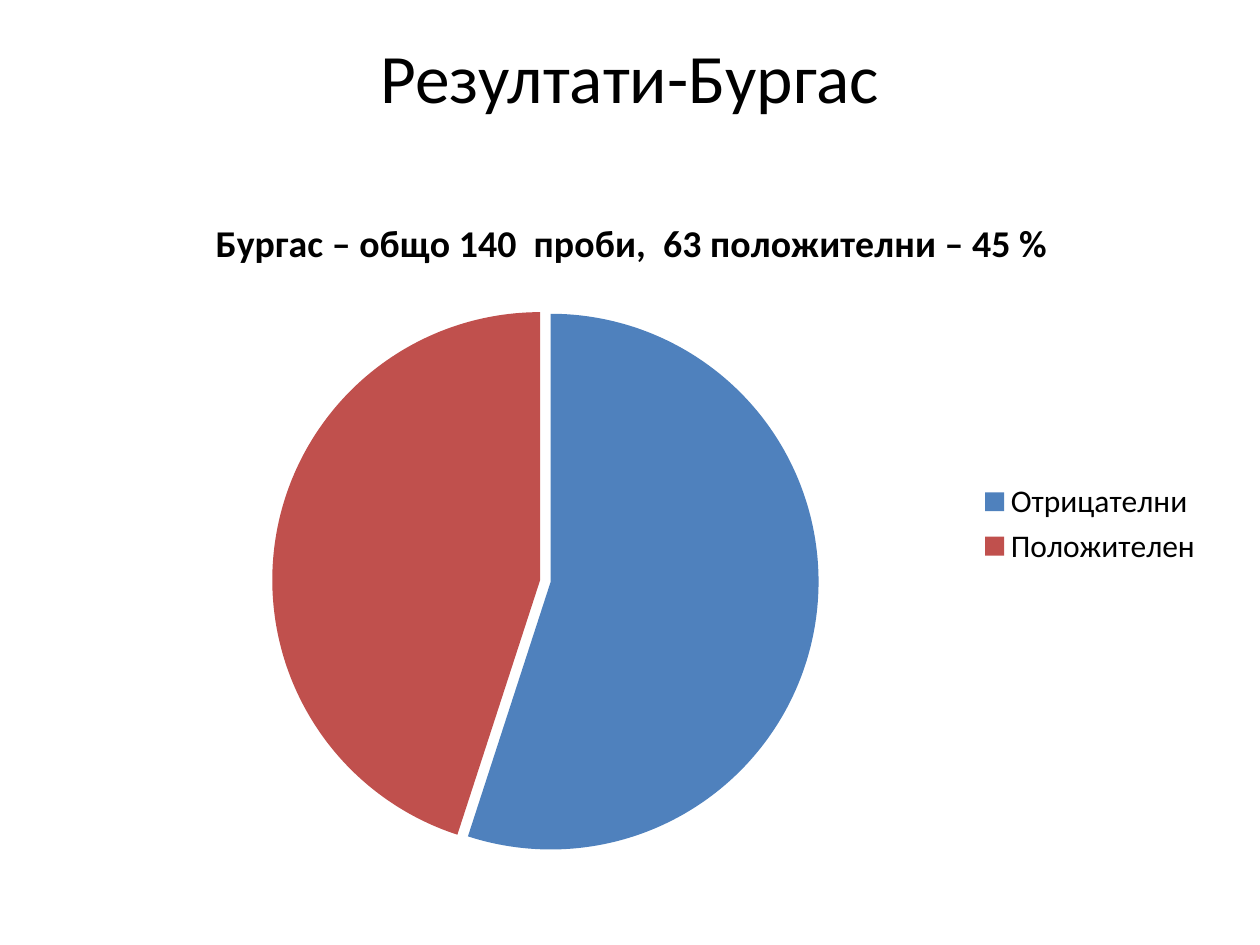
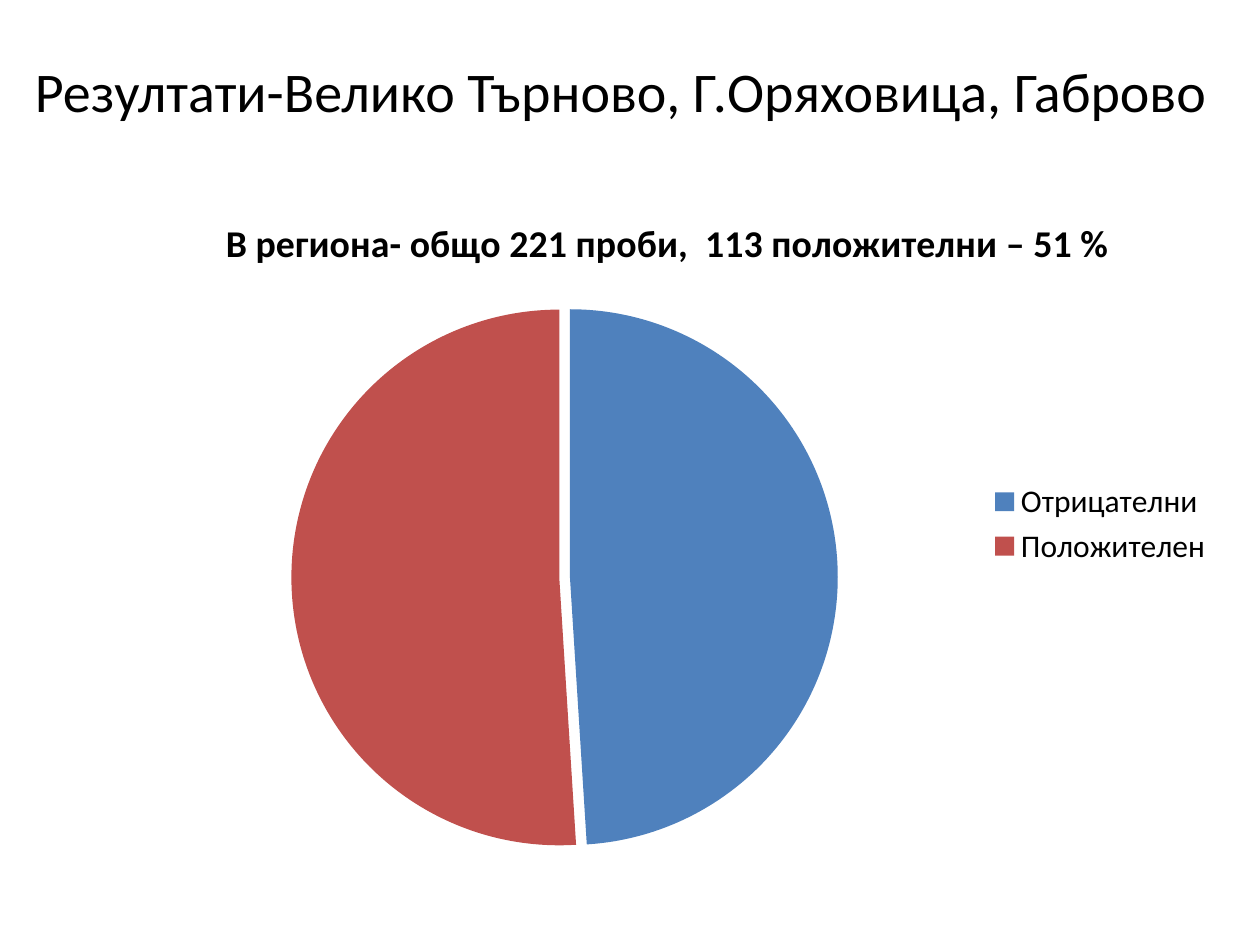
from lxml.etree import SubElement
from pptx import Presentation
from pptx.chart.data import CategoryChartData
from pptx.dml.color import RGBColor
from pptx.enum.chart import XL_CHART_TYPE as ChartType, XL_LEGEND_POSITION as LegendPos
from pptx.enum.text import MSO_ANCHOR as Anchor, PP_ALIGN as Align
from pptx.oxml.ns import qn
from pptx.util import Inches, Pt

BLACK = RGBColor(0x00, 0x00, 0x00)
BLUE = RGBColor(0x4F, 0x81, 0xBD)
RED = RGBColor(0xC0, 0x50, 0x4D)
OUTCOMES = {"Отрицателни": BLUE, "Положителен": RED}


def write(tf, text, size, font="Calibri", color=BLACK, bold=False, align=Align.CENTER):
    p = tf.paragraphs[0]
    p.alignment = align
    r = p.add_run()
    r.text = text
    r.font.name = font
    r.font.size = Pt(size)
    r.font.bold = bold
    r.font.color.rgb = color


def chart_layout(parent, index, **values):
    for old in parent.findall(qn("c:layout")):
        parent.remove(old)
    layout = SubElement(parent, qn("c:layout"))
    parent.insert(index, layout)
    manual = SubElement(layout, qn("c:manualLayout"))
    for tag, value in values.items():
        SubElement(manual, qn(f"c:{tag}")).set("val", str(value))


class Deck:
    font = "Calibri"
    chart_size = 18
    heading_size = 21.6

    def __init__(self, width, height):
        self.prs = Presentation()
        self.prs.slide_width = Inches(width)
        self.prs.slide_height = Inches(height)
        self.s = None

    def slide(self):
        self.s = self.prs.slides.add_slide(self.prs.slide_layouts[6])

    def box(self, x, y, w, h):
        width, height = self.prs.slide_width, self.prs.slide_height
        return int(x * width), int(y * height), int(w * width), int(h * height)

    def title(self, text, size, *shares):
        tf = self.s.shapes.add_textbox(*self.box(*shares)).text_frame
        tf.word_wrap = True
        tf.vertical_anchor = Anchor.MIDDLE
        tf.margin_left = tf.margin_right = tf.margin_top = tf.margin_bottom = 0
        write(tf, text, size, self.font)

    def pie(self, heading, values, left, plot_x, plot_y):
        data = CategoryChartData()
        data.categories = list(OUTCOMES)
        data.add_series("Series 1", values)
        frame = self.s.shapes.add_chart(
            ChartType.PIE, *self.box(left, 0.185, 0.898, 0.739), data)
        chart = frame.chart
        chart.font.name = self.font
        chart.font.size = Pt(self.chart_size)
        chart.font.color.rgb = BLACK
        chart.has_legend = True
        chart.legend.position = LegendPos.RIGHT
        chart.legend.include_in_layout = False
        self.heading(chart, heading)
        self.slices(chart)
        chart_layout(chart.plots[0]._element.getparent(), 0, layoutTarget="inner",
                     xMode="edge", yMode="edge", x=plot_x, y=plot_y, w=0.483, h=0.783)

    def heading(self, chart, text):
        chart.has_title = True
        title = chart.chart_title
        title.include_in_layout = False
        write(title.text_frame, text, self.heading_size, self.font, bold=True)
        chart_layout(title._element, 1, xMode="edge", yMode="edge", x=0.11, y=0.05)

    def slices(self, chart):
        plot = chart.plots[0]
        plot.vary_by_categories = True
        series = plot.series[0]
        for i, color in enumerate(OUTCOMES.values()):
            fill = series.points[i].format.fill
            fill.solid()
            fill.fore_color.rgb = color
        ser = series._element
        explosion = SubElement(ser, qn("c:explosion"))
        explosion.set("val", "2")
        ser.find(qn("c:dPt")).addprevious(explosion)


def main():
    deck = Deck(10, 7.5)

    deck.slide()
    deck.title("Резултати-Бургас", 39.6, 0.05, 0.04, 0.9, 0.08)
    deck.pie("Бургас – общо 140  проби,  63 положителни – 45 %", (55, 45),
             left=0.067, plot_x=0.166, plot_y=0.19)

    deck.slide()
    deck.title("Резултати-Велико Търново, Г.Оряховица, Габрово", 32,
               0.012, 0.059, 0.962, 0.073)
    deck.pie("В региона- общо 221 проби,  113 положителни – 51 %", (49, 51),
             left=0.075, plot_x=0.174, plot_y=0.185)

    deck.prs.save("out.pptx")


if __name__ == "__main__":
    main()
